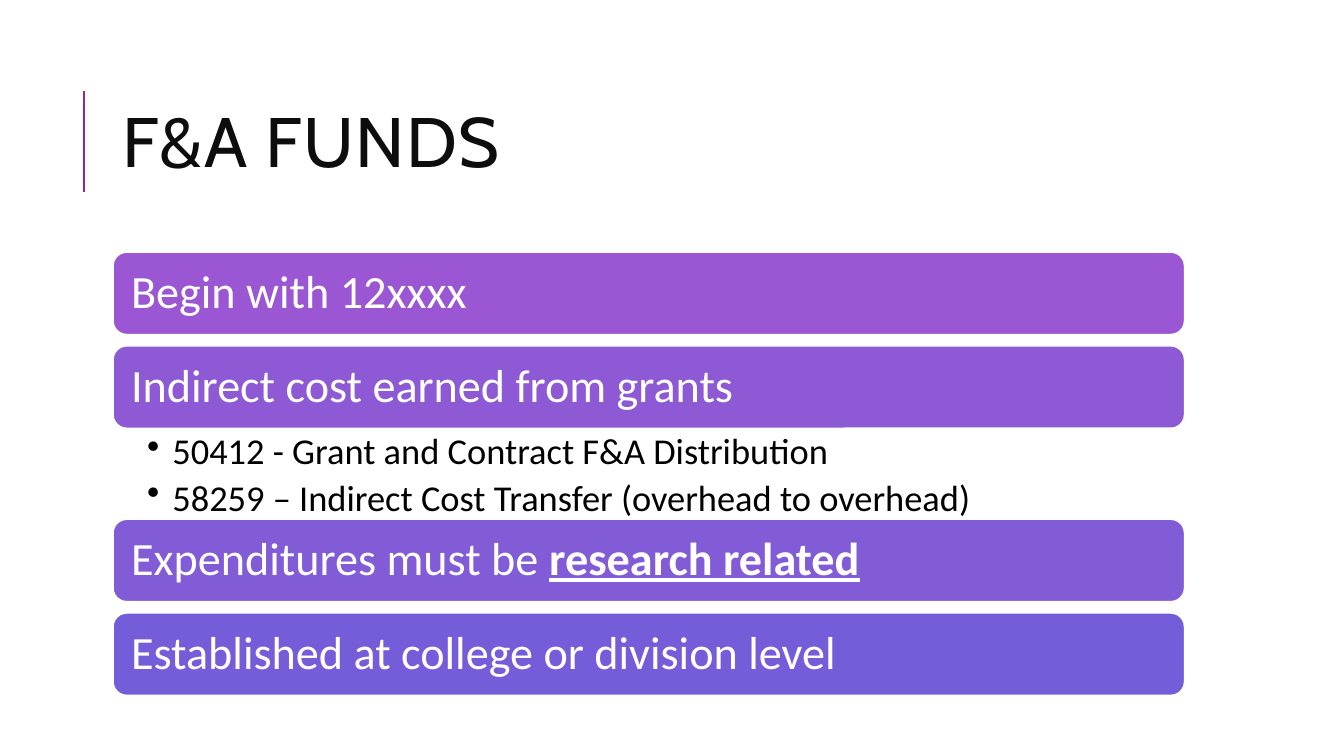
from dataclasses import dataclass

from lxml import etree
from pptx import Presentation
from pptx.dml.color import RGBColor
from pptx.enum.shapes import MSO_CONNECTOR, MSO_SHAPE
from pptx.enum.text import MSO_ANCHOR, PP_ALIGN
from pptx.oxml.ns import qn
from pptx.util import Inches, Pt

LINE = MSO_CONNECTOR.STRAIGHT
ROUND_RECT = MSO_SHAPE.ROUNDED_RECTANGLE
MIDDLE, TOP = MSO_ANCHOR.MIDDLE, MSO_ANCHOR.TOP
LEFT_ALIGN = PP_ALIGN.LEFT

COLORS = {"accent": "92278F", "title": "0D0D0D", "white": "FFFFFF", "black": "000000",
          "bar1": "9B57D3", "bar2": "8E59D5", "bar3": "825BD7", "bar4": "755DD9"}
TITLE_FONT = {"name": "Cabin", "size": Pt(50)}
BAR_FONT = {"name": "Calibri", "size": Pt(33)}
BULLET_FONT = {"name": "Calibri", "size": Pt(26)}
EMPHASIS = {"bold": True, "underline": True}

LEFT, WIDTH = 1.12, 10.63
BAR_TOP, BAR_HEIGHT, BAR_GAP = 2.5, 0.82, 0.11
BULLETS_HEIGHT = 0.9


@dataclass
class Bar:
    color: str
    text: str
    emphasis: str = ""
    bullets: tuple[str, ...] = ()


BARS = [
    Bar("bar1", "Begin with 12xxxx"),
    Bar("bar2", "Indirect cost earned from grants",
        bullets=("50412 - Grant and Contract F&A Distribution",
                 "58259 – Indirect Cost Transfer (overhead to overhead)")),
    Bar("bar3", "Expenditures must be ", emphasis="research related"),
    Bar("bar4", "Established at college or division level"),
]


def rgb(name: str) -> RGBColor:
    return RGBColor.from_string(COLORS[name])


def set_frame(sp, anchor, margins: tuple[float, float, float, float]):
    tf = sp.text_frame
    tf.word_wrap = True
    tf.vertical_anchor = anchor
    for side, inset in zip(("left", "top", "right", "bottom"), margins):
        setattr(tf, f"margin_{side}", Inches(inset))
    return tf


def add_run(p, text: str, color: str, font: dict):
    r = p.add_run()
    r.text = text
    for key, value in font.items():
        setattr(r.font, key, value)
    r.font.color.rgb = rgb(color)
    return r


def add_title(slide, text: str) -> None:
    line = slide.shapes.add_connector(LINE, Inches(0.83), Inches(1.9), Inches(0.83), Inches(0.9))
    line.line.color.rgb = rgb("accent")
    line.line.width = Pt(1.5)
    etree.SubElement(line._element.spPr, qn("a:effectLst"))

    sp = slide.shapes.add_textbox(Inches(LEFT), Inches(0.64), Inches(WIDTH), Inches(1.64))
    p = set_frame(sp, MIDDLE, (0.1, 0.05, 0.1, 0.05)).paragraphs[0]
    p.line_spacing = 0.8
    r = add_run(p, text, "title", TITLE_FONT)
    r.font._element.set("spc", "100")


def add_bar(slide, bar: Bar, top: float) -> None:
    sp = slide.shapes.add_shape(ROUND_RECT, Inches(LEFT), Inches(top),
                                Inches(WIDTH), Inches(BAR_HEIGHT))
    sp.shadow.inherit = False
    sp.fill.solid()
    sp.fill.fore_color.rgb = rgb(bar.color)
    sp.line.color.rgb = rgb("white")
    sp.line.width = Pt(1.25)
    p = set_frame(sp, MIDDLE, (0.14, 0.14, 0.14, 0.14)).paragraphs[0]
    p.alignment = LEFT_ALIGN
    p.line_spacing = 0.9
    add_run(p, bar.text, "white", BAR_FONT)
    if bar.emphasis:
        add_run(p, bar.emphasis, "white", BAR_FONT | EMPHASIS)


def add_bullets(slide, items: tuple[str, ...], top: float) -> None:
    sp = slide.shapes.add_textbox(Inches(LEFT), Inches(top), Inches(WIDTH), Inches(BULLETS_HEIGHT))
    tf = set_frame(sp, TOP, (0.34, 0.05, 0.26, 0.05))
    for i, item in enumerate(items):
        p = tf.add_paragraph() if i else tf.paragraphs[0]
        p.level = 1
        p.line_spacing = 0.9
        p.space_after = Pt(5.2)
        pPr = p._p.get_or_add_pPr()
        pPr.set("marL", str(Inches(0.25)))
        pPr.set("indent", str(Inches(-0.25)))
        etree.SubElement(pPr, qn("a:buChar"), char="•")
        add_run(p, item, "black", BULLET_FONT)


def main() -> None:
    prs = Presentation()
    prs.slide_width, prs.slide_height = Inches(13.33), Inches(7.5)
    slide = prs.slides.add_slide(prs.slide_layouts[6])

    # Title with its accent line
    add_title(slide, "F&A FUNDS")

    # Bars stacked downwards; bullets take the place of the gap
    top = BAR_TOP
    for bar in BARS:
        add_bar(slide, bar, top)
        top += BAR_HEIGHT
        if bar.bullets:
            add_bullets(slide, bar.bullets, top)
            top += BULLETS_HEIGHT
        else:
            top += BAR_GAP

    prs.save("out.pptx")


if __name__ == "__main__":
    main()
